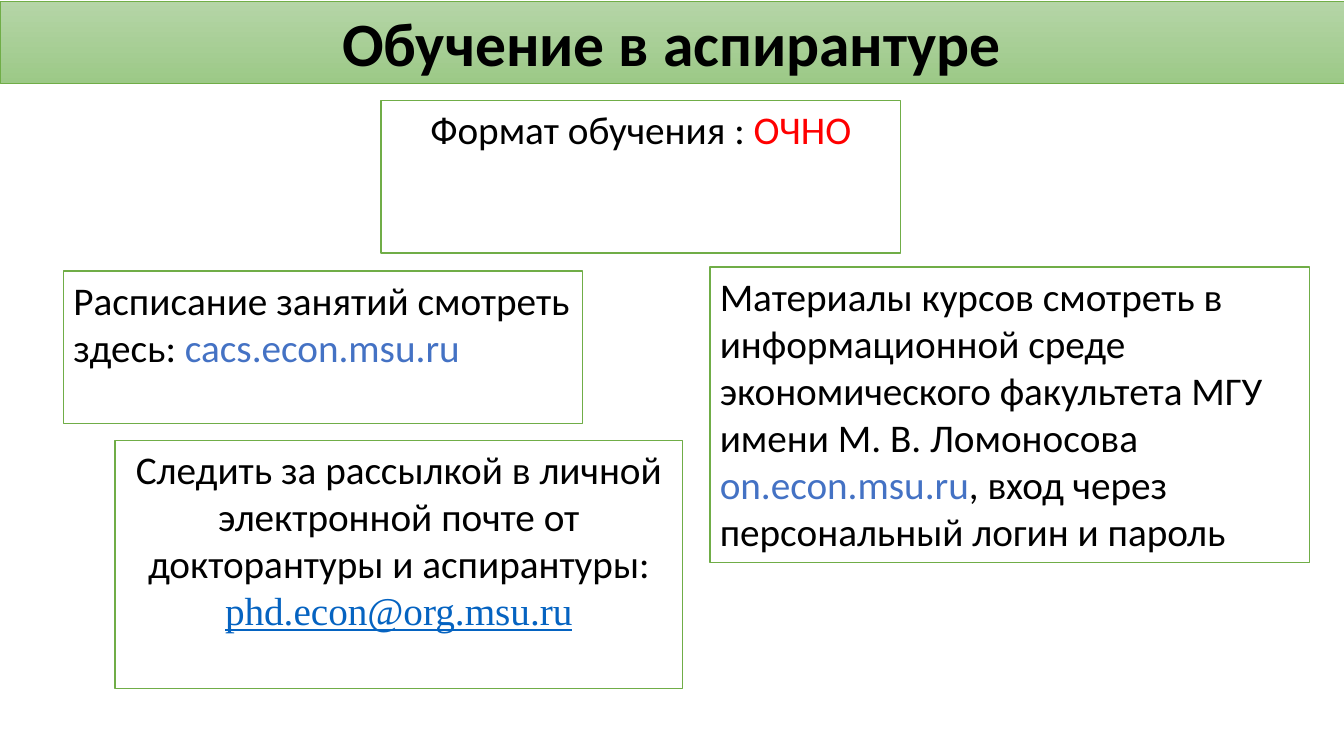
from pptx import Presentation
from pptx.dml.color import RGBColor as RGB
from pptx.enum.shapes import MSO_SHAPE as Shape
from pptx.enum.text import MSO_ANCHOR as Anchor, PP_ALIGN as Align
from pptx.util import Inches, Pt

COLORS = {
    "black": "000000", "white": "FFFFFF", "red": "FF0000",
    "blue": "4472C4", "mail": "0563C1", "green": "70AD47",
    "light": "B5D5A7", "deep": "9CC987",
}


def color(name):
    return RGB.from_string(COLORS[name])


def add_box(place, paras, align, size=28, width=1):
    """Add an outlined box; each paragraph is a list of (text, color) runs."""
    box = slide.shapes.add_shape(Shape.RECTANGLE, *map(Inches, place))
    box.shadow.inherit = False
    box.fill.solid()
    box.fill.fore_color.rgb = color("white")
    box.line.color.rgb = color("green")
    box.line.width = Pt(width)
    frame = box.text_frame
    frame.word_wrap = True
    frame.vertical_anchor = Anchor.TOP
    for i, runs in enumerate(paras):
        para = frame.add_paragraph() if i else frame.paragraphs[0]
        para.alignment = align
        for text, tone in runs:
            run = para.add_run()
            run.text = text
            font = run.font
            font.size = Pt(size)
            font.name = "Times New Roman" if tone == "mail" else "Calibri"
            font.underline = tone == "mail"
            font.color.rgb = color(tone)
    return box


deck = Presentation()
deck.slide_width, deck.slide_height = Inches(13.33), Inches(7.5)
slide = deck.slides.add_slide(deck.slide_layouts[6])

# Title band
title = add_box((0, 0.01, 13.33, 0.82),
                [[("Обучение в аспирантуре", "black")]],
                Align.CENTER, 44, 0.5)
title.fill.gradient()
title.fill.gradient_angle = 270
for stop, tone in zip(title.fill.gradient_stops, ("light", "deep")):
    stop.color.rgb = color(tone)
title.text_frame.vertical_anchor = Anchor.MIDDLE
title.text_frame.paragraphs[0].runs[0].font.bold = True

# Notes for students
boxes = [
    ((0.63, 2.69, 5.15, 1.51), Align.LEFT, [
        [("Расписание занятий смотреть здесь: ", "black"),
         ("cacs.econ.msu.ru", "blue")]]),
    ((7.04, 2.65, 5.95, 2.93), Align.LEFT, [
        [("Материалы курсов смотреть в информационной среде экономического "
          "факультета МГУ имени М. В. Ломоносова ", "black"),
         ("on.econ.msu.ru", "blue"),
         (", вход через персональный логин и пароль", "black")]]),
    ((1.14, 4.37, 5.63, 2.46), Align.CENTER, [
        [("Следить за рассылкой в личной электронной почте от "
          "докторантуры и аспирантуры:", "black")],
        [("phd.econ@org.msu.ru", "mail")]]),
    ((3.78, 1, 5.15, 1.51), Align.CENTER, [
        [("Формат обучения : ", "black"), ("ОЧНО", "red")]]),
]
for place, align, paras in boxes:
    add_box(place, paras, align)

deck.save("out.pptx")
